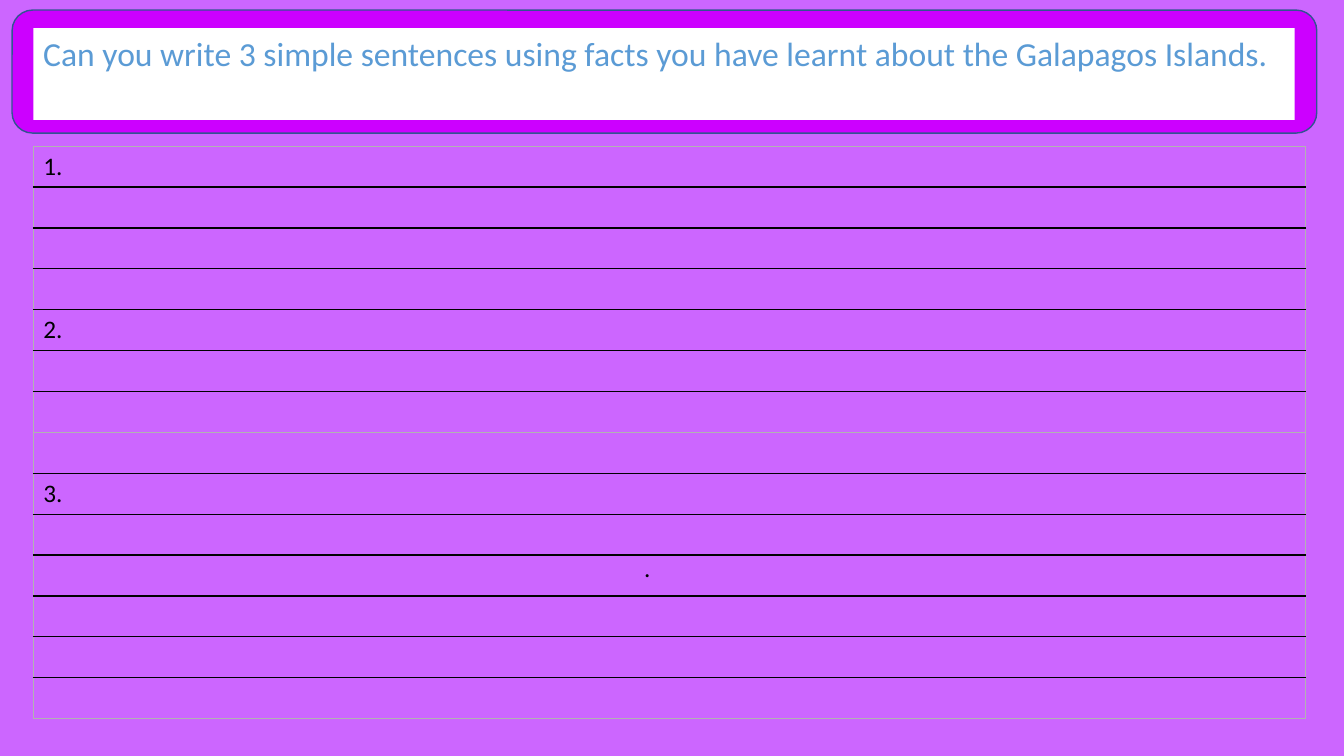
from lxml.etree import SubElement
from pptx import Presentation
from pptx.dml.color import RGBColor
from pptx.enum.shapes import MSO_SHAPE
from pptx.enum.text import MSO_ANCHOR, PP_ALIGN
from pptx.oxml.ns import qn
from pptx.util import Inches, Pt

LILAC = RGBColor(0xCC, 0x66, 0xFF)
PURPLE = RGBColor(0xCC, 0x00, 0xFF)
NAVY = RGBColor(0x32, 0x54, 0x91)
BLUE = RGBColor(0x5B, 0x9B, 0xD5)
WHITE = RGBColor(0xFF, 0xFF, 0xFF)
BLACK = RGBColor(0x00, 0x00, 0x00)
GREY = RGBColor(0xB2, 0xB2, 0xB2)

ROWS = 7
TABLE_LEFT, TABLE_WIDTH, TABLE_HEIGHT = 0.33, 12.62, 2.84
QUESTION = ("Can you write 3 simple sentences using facts you have learnt "
            "about the Galapagos Islands.")


def write(frame, text, size=18, color=BLACK, font="Calibri"):
    para = frame.paragraphs[0]
    para.alignment = PP_ALIGN.LEFT
    span = para.add_run()
    span.text = text
    span.font.size = Pt(size)
    span.font.name = font
    span.font.color.rgb = color


def add_panel(page, kind, left, top, width, height, fill, line=None):
    panel = page.shapes.add_shape(
        kind, Inches(left), Inches(top), Inches(width), Inches(height))
    panel.shadow.inherit = False
    panel.fill.solid()
    panel.fill.fore_color.rgb = fill
    if line is None:
        panel.line.fill.background()
    else:
        panel.line.color.rgb = line
        panel.line.width = Pt(1)
    return panel


def add_border(cell, side, color, width):
    border = SubElement(cell._tc.get_or_add_tcPr(), qn(f"a:ln{side}"),
                        w=str(Pt(width)))
    fill = SubElement(border, qn("a:solidFill"))
    SubElement(fill, qn("a:srgbClr"), val=str(color))


def add_writing_lines(page, top, numbers):
    frame = page.shapes.add_table(
        ROWS, 1, Inches(TABLE_LEFT), Inches(top),
        Inches(TABLE_WIDTH), Inches(TABLE_HEIGHT))
    table = frame.table
    table.first_row = False
    table.horz_banding = False
    for index in range(ROWS):
        cell = table.cell(index, 0)
        edges = {"L": True, "R": True, "T": index == 0, "B": index == ROWS - 1}
        for side, outer in edges.items():
            add_border(cell, side, GREY if outer else BLACK, 0.5 if outer else 1)
        cell.fill.background()
        if index in numbers:
            write(cell.text_frame, numbers[index])


def main():
    deck = Presentation()
    deck.slide_width, deck.slide_height = Inches(13.33), Inches(7.5)
    page = deck.slides.add_slide(deck.slide_layouts[6])
    page.background.fill.solid()
    page.background.fill.fore_color.rgb = LILAC

    add_panel(page, MSO_SHAPE.ROUNDED_RECTANGLE, 0.12, 0.1, 12.94, 1.22,
              PURPLE, line=NAVY)
    dot = page.shapes.add_textbox(
        Inches(6.29), Inches(5.43), Inches(0.29), Inches(0.4))
    dot.text_frame.word_wrap = True
    write(dot.text_frame, ".")

    question = add_panel(page, MSO_SHAPE.RECTANGLE, 0.33, 0.28, 12.51, 0.91, WHITE)
    question.text_frame.word_wrap = True
    question.text_frame.vertical_anchor = MSO_ANCHOR.TOP
    write(question.text_frame, QUESTION, size=24, color=BLUE)

    for block, numbers in enumerate([{0: "1.", 4: "2."}, {1: "3."}]):
        add_writing_lines(page, 1.45 + block * TABLE_HEIGHT, numbers)
    deck.save("out.pptx")


main()
